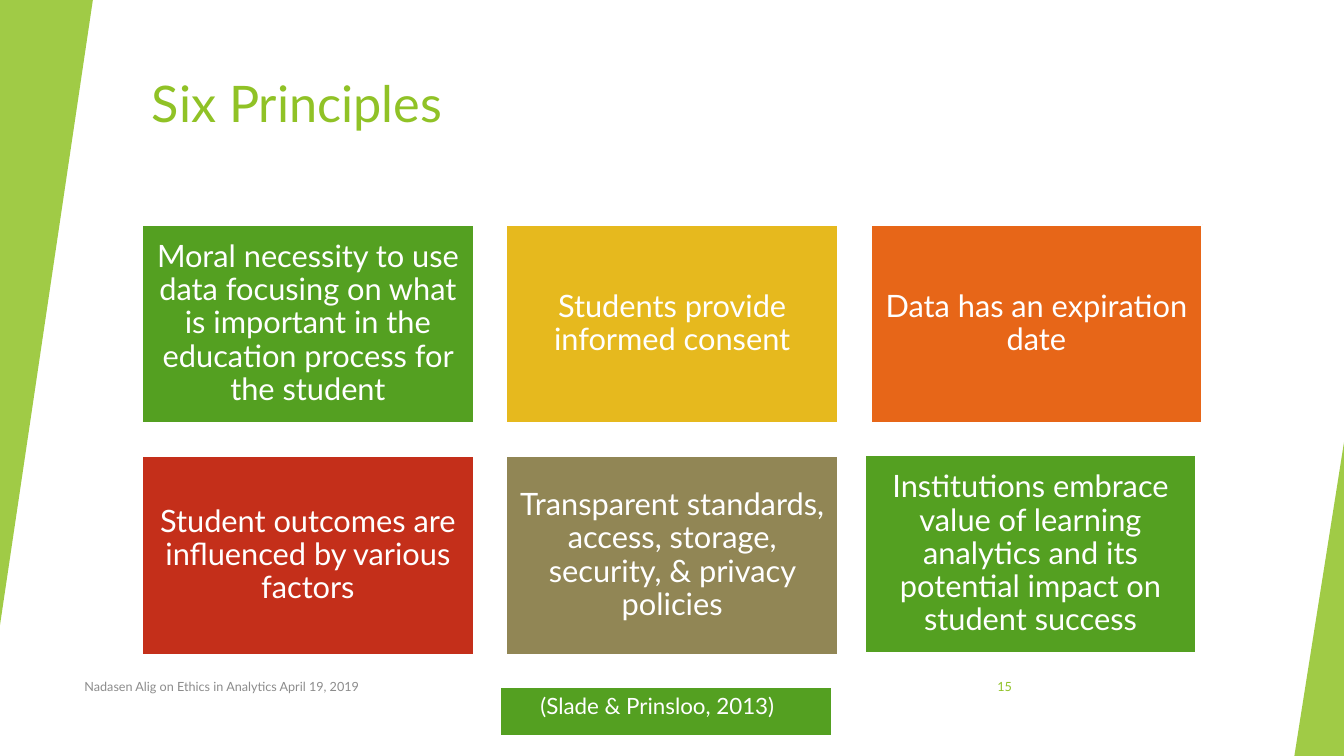
"""Build the Six Principles slide."""
from lxml import etree
from pptx import Presentation
from pptx import util as u
from pptx.dml.color import RGBColor
from pptx.enum import shapes, text
from pptx.oxml.ns import qn

COLORS = {
    "lime": "90C226", "green": "54A021", "yellow": "E6B91E", "orange": "E76618",
    "red": "C42F1A", "olive": "918655", "white": "FFFFFF", "gray": "8C8C8C",
}
PRINCIPLES = [
    ("green", "Moral necessity to use data focusing on what is important in the education process for the student"),
    ("yellow", "Students provide informed consent"),
    ("orange", "Data has an expiration date"),
    ("red", "Student outcomes are influenced by various factors"),
    ("olive", "Transparent standards, access, storage, security, & privacy policies"),
    ("green", "Institutions embrace value of learning analytics and its potential impact on student success"),
]
LEFT, TOP, WIDTH, HEIGHT = 3.58, 5.66, 8.36, 5.0
COLUMN_STEP, ROW_STEP = 9.18, 5.84
LAST_SHIFT = (-0.15, -0.03)
MIDDLE, UPPER = text.MSO_ANCHOR.MIDDLE, text.MSO_ANCHOR.TOP
CENTER, START, END = text.PP_ALIGN.CENTER, text.PP_ALIGN.LEFT, text.PP_ALIGN.RIGHT


def apply(target, values):
    for name, value in values.items():
        setattr(target, name, value)


class SlideStyle:
    def __init__(self, page, font):
        self.page = page
        self.font = font

    def color(self, name):
        return RGBColor.from_string(COLORS[name])

    def add_words(self, box, words, size, color, frame, layout):
        apply(box.text_frame, {"word_wrap": True, **frame})
        para = box.text_frame.paragraphs[0]
        apply(para, layout)
        span = para.add_run()
        span.text = words
        apply(span.font, {"name": self.font, "size": u.Pt(size)})
        span.font.color.rgb = self.color(color)

    def shape(self, kind, place, fill):
        shape = self.page.shapes.add_shape(kind, *map(u.Cm, place))
        shape.shadow.inherit = False
        shape.fill.solid()
        shape.fill.fore_color.rgb = self.color(fill)
        return shape

    def label(self, place, words, size, color, anchor=UPPER, align=START):
        box = self.page.shapes.add_textbox(*map(u.Cm, place))
        self.add_words(box, words, size, color, {"vertical_anchor": anchor}, {"alignment": align})

    def tile(self, place, fill, words, size=22, anchor=MIDDLE, align=CENTER, inset=0.23, indent=0.23):
        box = self.shape(shapes.MSO_SHAPE.RECTANGLE, place, fill)
        box.line.color.rgb = self.color("white")
        box.line.width = u.Pt(1.5)
        frame = {f"margin_{side}": u.Cm(inset) for side in ("top", "right", "bottom")}
        frame.update(margin_left=u.Cm(indent), vertical_anchor=anchor)
        self.add_words(box, words, size, "white", frame, {"alignment": align, "line_spacing": 0.9})

    def wedge(self, place, rotation=0):
        wedge = self.shape(shapes.MSO_SHAPE.ISOSCELES_TRIANGLE, place, "lime")
        wedge.adjustments[0] = 1
        wedge.rotation = rotation
        wedge.line.fill.background()
        tint = wedge.element.spPr.find(qn("a:solidFill"))[0]
        etree.SubElement(tint, qn("a:alpha"), val="85000")


def main():
    deck = Presentation()
    apply(deck, {"slide_width": u.Cm(33.87), "slide_height": u.Cm(19.05)})
    style = SlideStyle(deck.slides.add_slide(deck.slide_layouts[6]), "Lato")

    style.label((LEFT, 1.7, 28.32, 3.05), "Six Principles", 36, "lime")
    style.wedge((0, 0, 2.34, 15.75), 180)
    style.wedge((32.62, 11.15, 1.25, 7.9))

    for index, (fill, words) in enumerate(PRINCIPLES):
        row, column = divmod(index, 3)
        shift_x, shift_y = LAST_SHIFT if index == len(PRINCIPLES) - 1 else (0, 0)
        left = LEFT + column * COLUMN_STEP + shift_x
        top = TOP + row * ROW_STEP + shift_y
        style.tile((left, top, WIDTH, HEIGHT), fill, words)

    style.tile((12.6, 17.32, WIDTH, 1.22), "green", "(Slade & Prinsloo, 2013)",
               size=16, anchor=UPPER, align=START, inset=0.2, indent=1.02)
    style.label((1.88, 16.79, 17.5, 1.02), "Nadasen Alig on Ethics in Analytics April 19, 2019",
                9, "gray", MIDDLE)
    style.label((23.85, 16.79, 1.9, 1.02), "15", 9, "lime", MIDDLE, END)
    deck.save("out.pptx")


if __name__ == "__main__":
    main()
